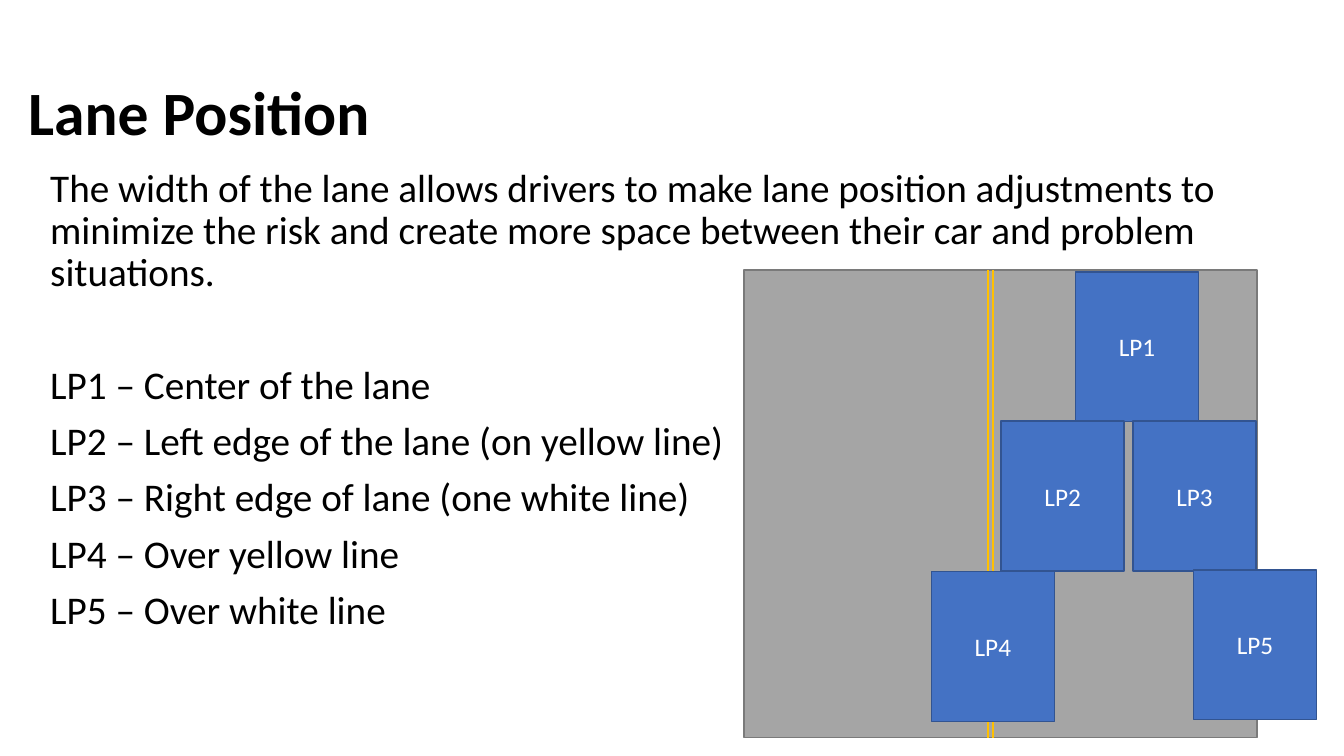
from lxml.etree import SubElement
from pptx import Presentation
from pptx.dml.color import RGBColor
from pptx.enum.shapes import MSO_CONNECTOR, MSO_SHAPE
from pptx.enum.text import MSO_ANCHOR, MSO_AUTO_SIZE, PP_ALIGN
from pptx.oxml.ns import qn
from pptx.util import Inches, Pt

BLACK = RGBColor(0, 0, 0)
WHITE = RGBColor(255, 255, 255)
ROAD = RGBColor(0xA5, 0xA5, 0xA5)
CURB = RGBColor(0x7A, 0x7A, 0x7A)
YELLOW = RGBColor(0xFF, 0xC0, 0)
BLUE = RGBColor(0x44, 0x72, 0xC4)
NAVY = RGBColor(0x32, 0x54, 0x91)
FONT = "Calibri"

INTRO = (
    "The width of the lane allows drivers to make lane position adjustments "
    "to minimize the risk and create more space between their car and "
    "problem situations."
)
TERMS = [
    "LP1 – Center of the lane",
    "LP2 – Left edge of the lane (on yellow line)",
    "LP3 – Right edge of lane (one white line)",
    "LP4 – Over yellow line",
    "LP5 – Over white line",
]
STRIPES = [47.5, 48.5]
CARS = [
    ("LP1", 64.6, 0.4),
    ("LP2", 50.1, 32.3),
    ("LP3", 75.8, 32.3),
    ("LP4", 36.5, 64.5),
    ("LP5", 87.6, 64.1),
]
CAR_SIZE = 24, 32


def style(para, size, color, bold=False):
    for run in para.runs:
        font = run.font
        font.name = FONT
        font.size = Pt(size)
        font.bold = bold
        font.color.rgb = color


def inner(box, x, y, wide, high):
    left, top, width, height = box
    return (
        int(left + width * x / 100),
        int(top + height * y / 100),
        int(width * wide / 100),
        int(height * high / 100),
    )


def add_title(slide, box):
    title = slide.shapes.title
    title.left, title.top, title.width, title.height = box
    frame = title.text_frame
    frame.text = "Lane Position"
    frame.auto_size = MSO_AUTO_SIZE.NONE
    frame.vertical_anchor = MSO_ANCHOR.MIDDLE
    para = frame.paragraphs[0]
    para.alignment = PP_ALIGN.LEFT
    para.line_spacing = 0.9
    style(para, 44, BLACK, True)


def add_body(slide, box):
    frame = slide.shapes.add_textbox(*box).text_frame
    frame.word_wrap = True
    frame.text = "\n".join([INTRO] + TERMS)
    for index, para in enumerate(frame.paragraphs):
        para.line_spacing = 0.9
        para.space_before = Pt((0, 50)[index] if index < 2 else 10)
        style(para, 28, BLACK)


def add_block(slide, box, fill, edge):
    block = slide.shapes.add_shape(MSO_SHAPE.RECTANGLE, *box)
    block.shadow.inherit = False
    block.fill.solid()
    block.fill.fore_color.rgb = fill
    block.line.color.rgb = edge
    block.line.width = Pt(1)
    return block


def add_road(slide, box):
    add_block(slide, box, ROAD, CURB)
    for share in STRIPES:
        x, top, _, high = inner(box, share, 0, 0, 100)
        stripe = slide.shapes.add_connector(
            MSO_CONNECTOR.STRAIGHT, x, top, x, top + high
        )
        stripe.line.color.rgb = YELLOW
        stripe.line.width = Pt(1.5)
        SubElement(stripe._element.spPr, qn("a:effectLst"))
    for name, x, y in CARS:
        car = add_block(slide, inner(box, x, y, *CAR_SIZE), BLUE, NAVY)
        frame = car.text_frame
        frame.text = name
        frame.vertical_anchor = MSO_ANCHOR.MIDDLE
        para = frame.paragraphs[0]
        para.alignment = PP_ALIGN.CENTER
        style(para, 18, WHITE)


def main():
    deck = Presentation()
    deck.slide_width = Inches(13.33)
    deck.slide_height = Inches(7.5)
    page = 0, 0, deck.slide_width, deck.slide_height
    slide = deck.slides.add_slide(deck.slide_layouts[5])
    add_title(slide, inner(page, 1.35, 5.6, 86.27, 19.33))
    add_body(slide, inner(page, 3, 21.6, 90.62, 64.8))
    add_road(slide, inner(page, 55.36, 35.73, 38.18, 61.87))
    deck.save("out.pptx")


if __name__ == "__main__":
    main()
